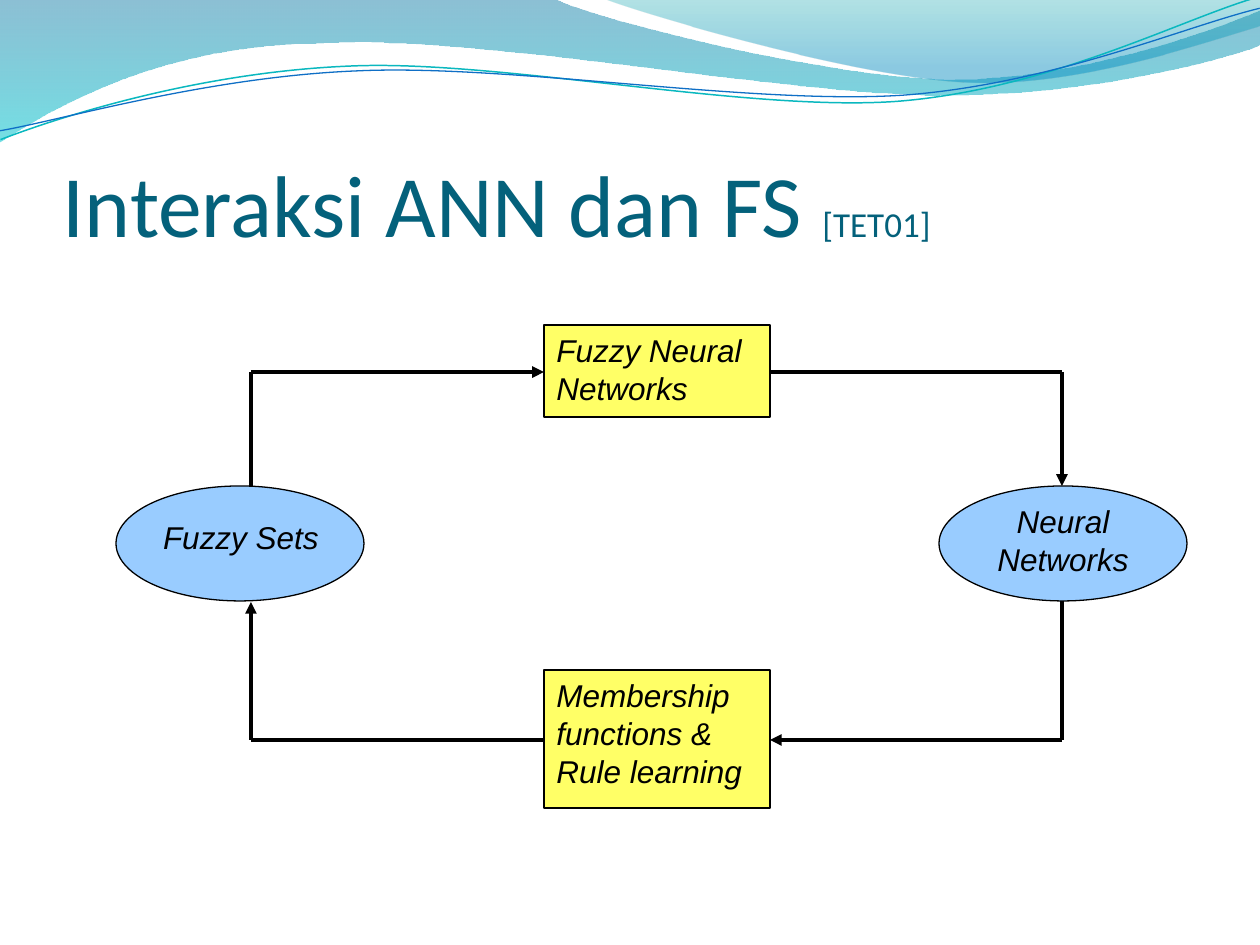
"""Build the slide on the interaction of neural networks and fuzzy sets."""
from dataclasses import dataclass

from lxml import etree
from pptx import Presentation
from pptx.dml.color import RGBColor
from pptx.enum.shapes import MSO_CONNECTOR, MSO_SHAPE
from pptx.enum.text import MSO_ANCHOR, PP_ALIGN
from pptx.oxml.ns import qn
from pptx.util import Emu, Pt

RECT, OVAL = MSO_SHAPE.RECTANGLE, MSO_SHAPE.OVAL
STRAIGHT = MSO_CONNECTOR.STRAIGHT
LEFT, CENTER = PP_ALIGN.LEFT, PP_ALIGN.CENTER
TOP, BOTTOM = MSO_ANCHOR.TOP, MSO_ANCHOR.BOTTOM
EMU_PER_PX = 914400 / 126
STRAND_TILT = 357.3


@dataclass(frozen=True)
class Theme:
    title_font: str = "Calibri"
    body_font: str = "Arial"
    title_color: str = "04617B"
    ink: str = "000000"
    process: str = "FFFF66"
    concept: str = "99CCFF"
    title_size: int = 50
    citation_size: int = 20
    body_size: int = 18
    outline: float = 0.75
    arrow: float = 2.25


THEME = Theme()
TITLE = [("Interaksi ANN dan FS ", THEME.title_size), ("[TET01]", THEME.citation_size)]
TITLE_AREA = (63, 97, 1134, 158)

BANDS = [
    ([(0, -1), (554, -1), (600, 21, 837, 79, 955, 79), (1075, 79, 1207, 33, 1260, 11),
      (1261, 45), (1239, 55, 1096, 96, 940, 95), (784, 95, 481, 35, 324, 43),
      (163, 44, 58, 105, -1, 142)],
     [(0, "0074A1", 45), (1, "00C6CF", 55)]),
    ([(604, -1), (641, 14, 859, 78, 969, 82), (1079, 87, 1211, 40, 1260, 26), (1260, 0)],
     [(0, "00A1A9", 30), (0.8, "008BBF", 45)]),
]
STRANDS = [
    ([(-2, 110), (58, 90, 199, 52, 350, 53), (499, 53, 745, 118, 896, 114),
      (1049, 109, 1184, 45, 1260, 27)], "0AB8BF", 0.85),
    ([(-2, 101), (57, 94, 207, 57, 357, 58), (509, 58, 750, 111, 902, 108),
      (1052, 104, 1188, 52, 1262, 38)], "0F6FC6", 0.75),
]
PROCESSES = [
    (["Fuzzy Neural Networks"], (544, 325, 226, 92)),
    (["Membership functions &", "Rule learning"], (544, 670, 226, 138)),
]
CONCEPTS = [
    (["Fuzzy Sets"], (116, 486, 248, 115), (128, 512, 226, 69)),
    (["Neural Networks"], (939, 486, 248, 115), (950, 496, 226, 92)),
]
ROUTES = [
    [(251, 486), (251, 372), (544, 372)],
    [(770, 372), (1062, 372), (1062, 486)],
    [(1062, 601), (1062, 740), (770, 740)],
    [(544, 740), (251, 740), (251, 602)],
]


def px(*lengths):
    return [Emu(round(length * EMU_PER_PX)) for length in lengths]


def rgb(color):
    return RGBColor.from_string(color)


def set_line(shape, color, width):
    shape.line.color.rgb = rgb(color)
    shape.line.width = Pt(width)


def style_span(span, font, size, color, italic=False):
    span.font.name, span.font.size, span.font.italic = font, Pt(size), italic
    span.font.color.rgb = rgb(color)


def add_outline(page, segments, close):
    ends = [px(*segment[-2:]) for segment in segments]
    builder = page.shapes.build_freeform(*ends[0])
    builder.add_line_segments(ends[1:], close=close)
    shape = builder.convert_to_shape()
    shape.shadow.inherit = False
    steps = list(shape._element.spPr.iter(qn("a:lnTo")))
    for step, segment in zip(steps, segments[1:]):
        if len(segment) == 2:
            continue
        step.tag = qn("a:cubicBezTo")
        for index in (0, 1):
            x, y = px(*segment[2 * index:2 * index + 2])
            control = etree.Element(qn("a:pt"), x=str(x - shape.left), y=str(y - shape.top))
            step.insert(index, control)
    return shape


def add_band(page, segments, stops):
    band = add_outline(page, segments, True)
    band.line.fill.background()
    band.fill.gradient()
    band.fill.gradient_angle = 270
    for stop, (position, color, _) in zip(band.fill.gradient_stops, stops):
        stop.position, stop.color.rgb = position, rgb(color)
    colors = band._element.spPr.iter(qn("a:srgbClr"))
    for color, (_, _, opacity) in zip(colors, stops):
        etree.SubElement(color, qn("a:alpha"), val=str(opacity * 1000))


def add_strand(page, segments, color, width):
    strand = add_outline(page, segments, False)
    strand.rotation = STRAND_TILT
    strand.fill.background()
    set_line(strand, color, width)


def add_title(page):
    frame = page.shapes.add_textbox(*px(*TITLE_AREA)).text_frame
    frame.word_wrap, frame.vertical_anchor = True, BOTTOM
    frame.margin_left = frame.margin_right = frame.margin_bottom = 0
    for words, size in TITLE:
        span = frame.paragraphs[0].add_run()
        span.text = words
        style_span(span, THEME.title_font, size, THEME.title_color)


def add_node(page, kind, area, color):
    node = page.shapes.add_shape(kind, *px(*area))
    node.shadow.inherit = False
    node.fill.solid()
    node.fill.fore_color.rgb = rgb(color)
    set_line(node, THEME.ink, THEME.outline)
    return node


def write_label(box, lines, alignment):
    frame = box.text_frame
    frame.word_wrap, frame.vertical_anchor = True, TOP
    frame.text = "\n".join(lines)
    for para in frame.paragraphs:
        para.alignment = alignment
        for span in para.runs:
            style_span(span, THEME.body_font, THEME.body_size, THEME.ink, True)


def add_route(page, stops):
    for start, end in zip(stops, stops[1:]):
        link = page.shapes.add_connector(STRAIGHT, *px(*start, *end))
        set_line(link, THEME.ink, THEME.arrow)
        etree.SubElement(link._element.spPr, qn("a:effectLst"))
    etree.SubElement(link.line._get_or_add_ln(), qn("a:tailEnd"), type="triangle")


def main():
    deck = Presentation()
    deck.slide_width, deck.slide_height = px(1260, 945)
    page = deck.slides.add_slide(deck.slide_layouts[6])
    for band in BANDS:
        add_band(page, *band)
    for strand in STRANDS:
        add_strand(page, *strand)
    add_title(page)
    for lines, area in PROCESSES:
        write_label(add_node(page, RECT, area, THEME.process), lines, LEFT)
    for lines, area, label_area in CONCEPTS:
        add_node(page, OVAL, area, THEME.concept)
        write_label(page.shapes.add_textbox(*px(*label_area)), lines, CENTER)
    for route in ROUTES:
        add_route(page, route)
    deck.save("out.pptx")


if __name__ == "__main__":
    main()
